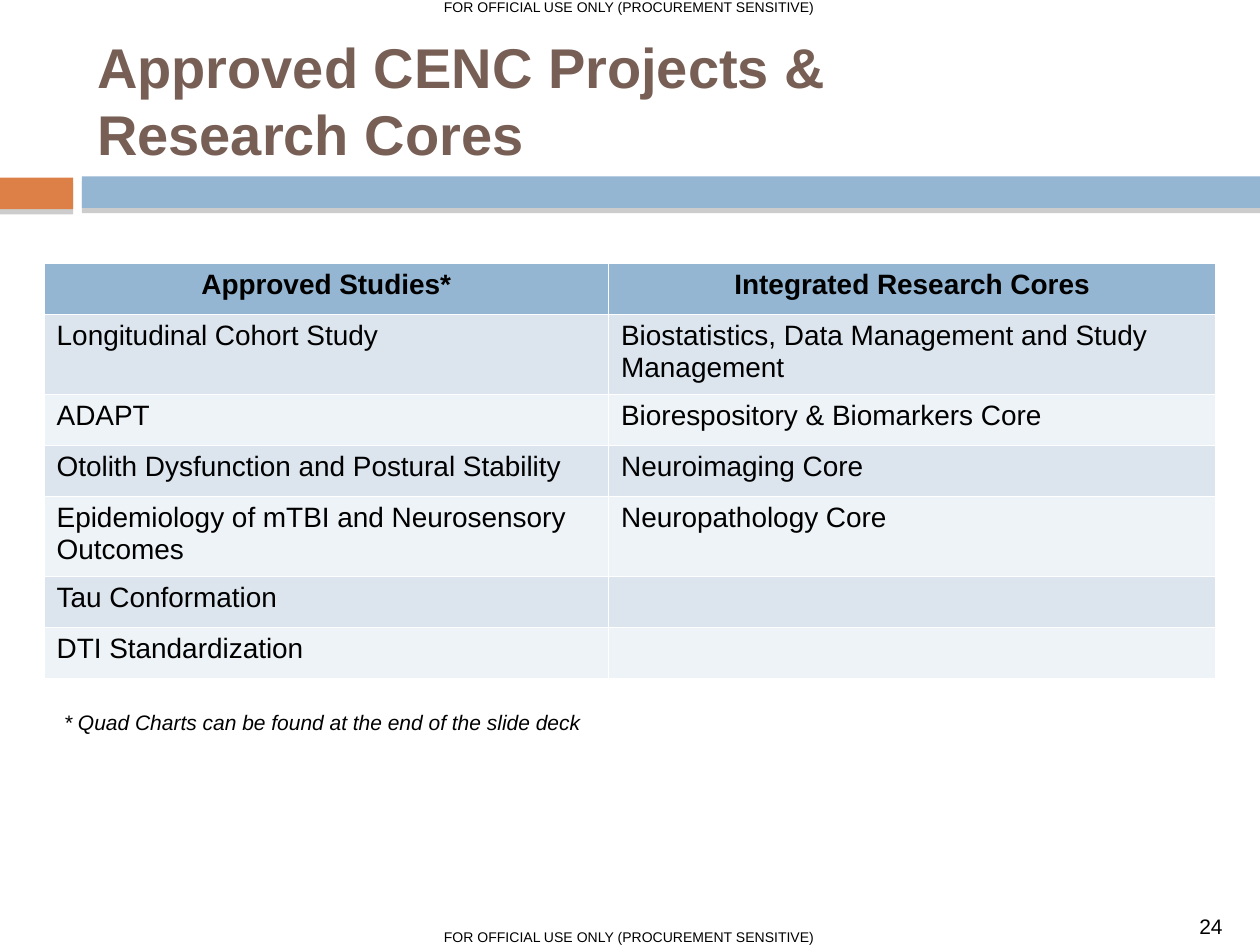
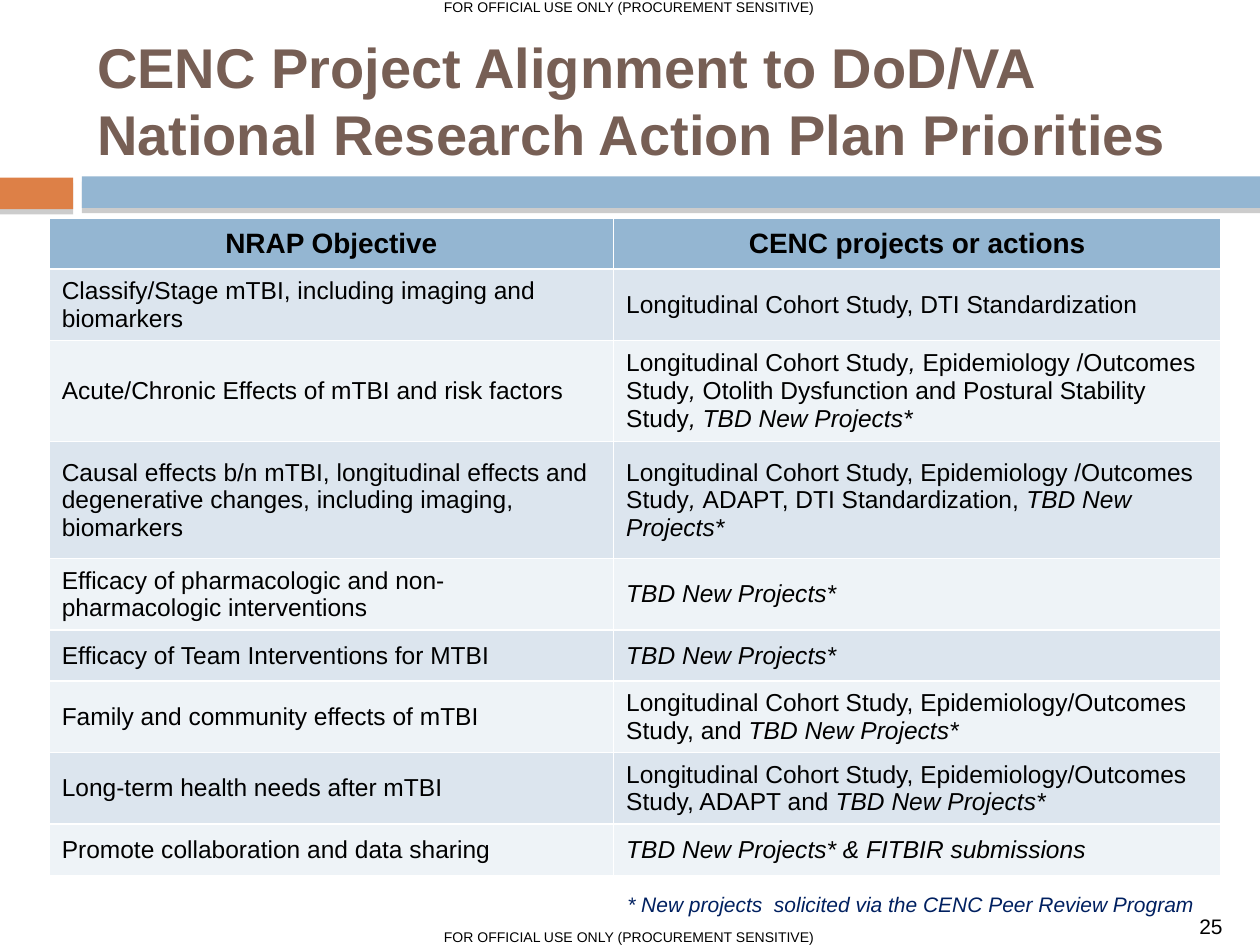
from lxml import etree
from pptx import Presentation
from pptx.dml.color import RGBColor
from pptx.enum.shapes import MSO_SHAPE
from pptx.enum.text import MSO_ANCHOR, MSO_AUTO_SIZE, PP_ALIGN
from pptx.oxml import parse_xml
from pptx.oxml.ns import nsdecls
from pptx.util import Inches, Pt

RECTANGLE = MSO_SHAPE.RECTANGLE
TOP, MIDDLE = MSO_ANCHOR.TOP, MSO_ANCHOR.MIDDLE
NO_AUTOFIT = MSO_AUTO_SIZE.NONE
LEFT, CENTER = PP_ALIGN.LEFT, PP_ALIGN.CENTER

FONT = "Arial"
BLACK = RGBColor(0x00, 0x00, 0x00)
NAVY = RGBColor(0x00, 0x20, 0x60)
BROWN = RGBColor(0x77, 0x5F, 0x55)
ORANGE = RGBColor(0xDD, 0x80, 0x47)
BLUE = RGBColor(0x94, 0xB6, 0xD2)
BLUE_TINT = RGBColor(0xDC, 0xE5, 0xEE)
PALE_TINT = RGBColor(0xEE, 0xF3, 0xF7)

MARKING = "FOR OFFICIAL USE ONLY (PROCUREMENT SENSITIVE)"
BANDS = [(0, 1.41, 0.58, ORANGE), (0.65, 1.4, 9.35, BLUE)]
BAND_SHADOW = (
    f'<a:effectLst {nsdecls("a")}><a:outerShdw blurRad="0" dist="38100" dir="5400000">'
    '<a:srgbClr val="808080"><a:alpha val="40000"/></a:srgbClr>'
    "</a:outerShdw></a:effectLst>"
)
COLUMN_WIDTHS = (4.48, 4.82)
ROW_HEIGHT = 0.4056

COHORT = "Longitudinal Cohort Study"
NEW_PROJECTS = "TBD New Projects*"

PAGES = [
    {
        "title": "Approved CENC Projects &\vResearch Cores",
        "table_at": (0.35, 2.09),
        "anchor": TOP,
        "body_size": 16,
        "tall_rows": {},
        "note": ("* Quad Charts can be found at the end of the slide deck", 0.41, 5.58, 5.71, BLACK),
        "rows": [
            ("Approved Studies*", "Integrated Research Cores"),
            (COHORT, "Biostatistics, Data Management and Study Management"),
            ("ADAPT", "Biorespository & Biomarkers Core"),
            ("Otolith Dysfunction and Postural Stability", "Neuroimaging Core"),
            ("Epidemiology of mTBI and Neurosensory Outcomes", "Neuropathology Core"),
            ("Tau Conformation", ""),
            ("DTI Standardization", ""),
        ],
    },
    {
        "title": "CENC Project Alignment to DoD/VA National Research Action Plan Priorities",
        "table_at": (0.39, 1.73),
        "anchor": MIDDLE,
        "body_size": 14,
        "tall_rows": {3: 0.93},
        "note": ("* New projects  solicited via the CENC Peer Review Program", 4.88, 7.03, 5.21, NAVY),
        "rows": [
            ("NRAP Objective", "CENC projects or actions"),
            ("Classify/Stage mTBI, including imaging and biomarkers",
             f"{COHORT}, DTI Standardization"),
            ("Acute/Chronic Effects of mTBI and risk factors",
             (COHORT, ", ", "Epidemiology /Outcomes Study", ", ",
              "Otolith Dysfunction and Postural Stability Study", f", {NEW_PROJECTS}")),
            ("Causal effects b/n mTBI, longitudinal effects and degenerative changes, "
             "including imaging, biomarkers",
             (f"{COHORT}, Epidemiology /Outcomes Study", ", ",
              "ADAPT, DTI Standardization, ", NEW_PROJECTS)),
            ("Efficacy of pharmacologic and non-pharmacologic interventions", ("", NEW_PROJECTS)),
            ("Efficacy of Team Interventions for MTBI", ("", NEW_PROJECTS)),
            ("Family and community effects of mTBI",
             (f"{COHORT}, Epidemiology/Outcomes Study, and ", NEW_PROJECTS)),
            ("Long-term health needs after mTBI",
             (f"{COHORT}, Epidemiology/Outcomes Study, ADAPT and ", NEW_PROJECTS)),
            ("Promote collaboration and data sharing", ("", f"{NEW_PROJECTS} & FITBIR submissions")),
        ],
    },
]


def style(paragraph, size, color=BLACK, bold=False, align=LEFT):
    paragraph.alignment = align
    paragraph.font.name = FONT
    paragraph.font.size = Pt(size)
    paragraph.font.bold = bold
    paragraph.font.color.rgb = color


def add_label(page, text, left, top, width, height, size, color=BLACK, align=LEFT):
    box = page.shapes.add_textbox(Inches(left), Inches(top), Inches(width), Inches(height))
    box.text_frame.word_wrap = True
    para = box.text_frame.paragraphs[0]
    para.text = text
    style(para, size, color, align=align)
    return para


deck = Presentation()
deck.slide_width = Inches(10)
deck.slide_height = Inches(7.5)
title_only = deck.slide_layouts[5]

for number, content in enumerate(PAGES, start=24):
    page = deck.slides.add_slide(title_only)

    for left, top, width, color in BANDS:
        band = page.shapes.add_shape(RECTANGLE, Inches(left), Inches(top), Inches(width), Inches(0.25))
        band.fill.solid()
        band.fill.fore_color.rgb = color
        band.line.fill.background()
        band.element.spPr.append(parse_xml(BAND_SHADOW))

    add_label(page, str(number), 9.42, 7.2, 0.66, 0.3, 12)
    for top in (7.32, -0.06):
        add_label(page, MARKING, 3.26, top, 3.47, 0.24, 8, align=CENTER)

    title = page.shapes.title
    title.left, title.top = Inches(0.67), Inches(0.25)
    title.width, title.height = Inches(8.92), Inches(1.08)
    title.text_frame.text = content["title"]
    title.text_frame.auto_size = NO_AUTOFIT
    title.text_frame.vertical_anchor = MIDDLE
    style(title.text_frame.paragraphs[0], 32, BROWN, bold=True)

    rows = content["rows"]
    left, top = content["table_at"]
    table = page.shapes.add_table(
        len(rows), len(COLUMN_WIDTHS), Inches(left), Inches(top),
        Inches(sum(COLUMN_WIDTHS)), Inches(ROW_HEIGHT * len(rows)),
    ).table
    for column, width in zip(table.columns, COLUMN_WIDTHS):
        column.width = Inches(width)
    for row_index, height in content["tall_rows"].items():
        table.rows[row_index].height = Inches(height)

    for row_index, row in enumerate(rows):
        header = row_index == 0
        tint = BLUE if header else (PALE_TINT, BLUE_TINT)[row_index % 2]
        for column_index, spans in enumerate(row):
            cell = table.cell(row_index, column_index)
            cell.fill.solid()
            cell.fill.fore_color.rgb = tint
            cell.vertical_anchor = content["anchor"]
            para = cell.text_frame.paragraphs[0]
            style(para, 16 if header else content["body_size"], bold=header,
                  align=CENTER if header else LEFT)
            if isinstance(spans, str):
                para.text = spans
                continue
            for span_index, text in enumerate(spans):
                if text:
                    span = para.add_run()
                    span.text = text
                    span.font.italic = span_index % 2 == 1

    text, left, top, width, color = content["note"]
    note = add_label(page, text, left, top, width, 0.3, 12, color)
    note.font.italic = True

deck.save("out.pptx")
